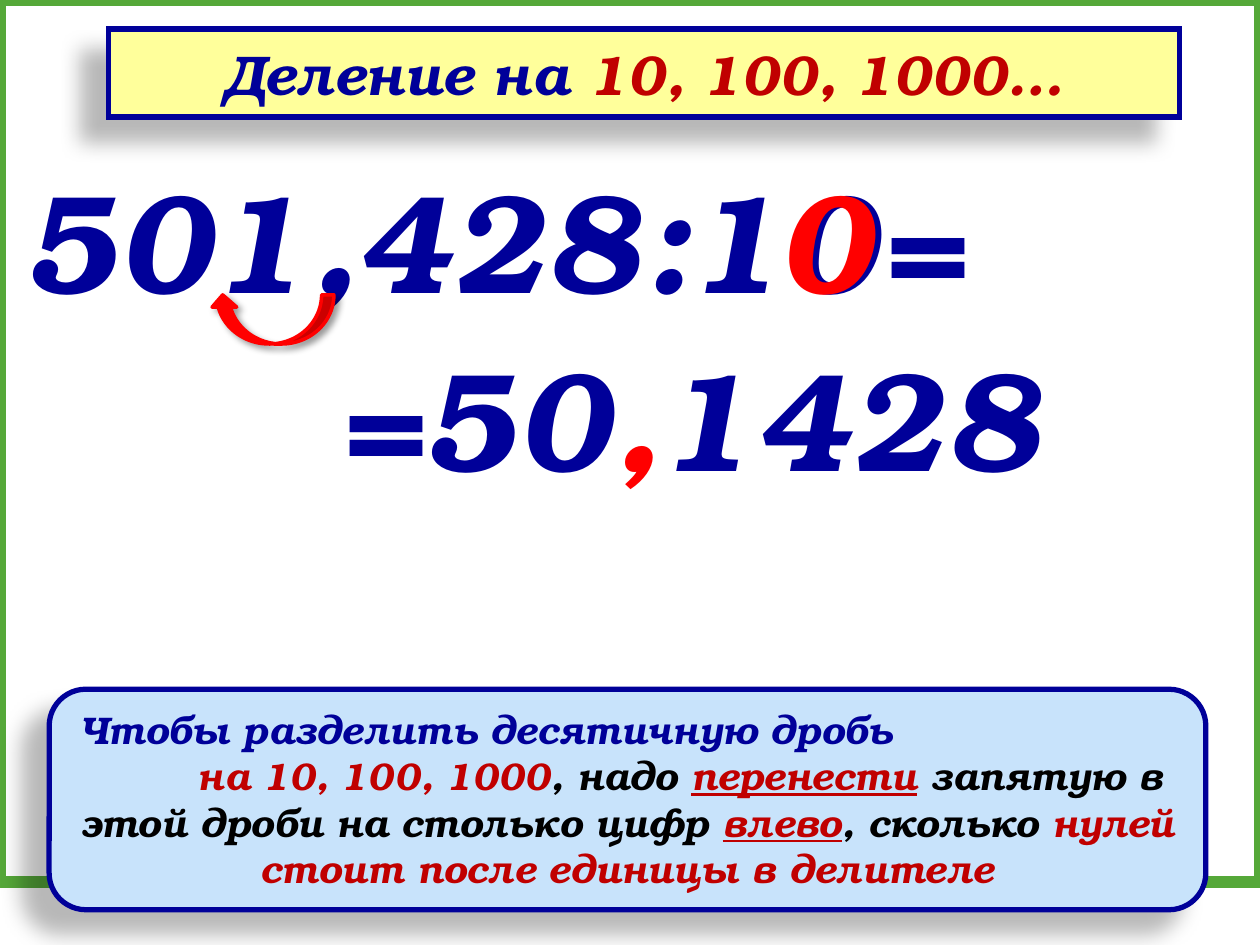
import math
from dataclasses import dataclass

import pptx
import pptx.dml.color
import pptx.enum.shapes
import pptx.enum.text
import pptx.oxml
import pptx.oxml.ns
import pptx.util
from pptx.util import Inches

ALIGN = pptx.enum.text.PP_ALIGN
SHAPE = pptx.enum.shapes.MSO_SHAPE


@dataclass(frozen=True)
class Theme:
    """Colours, font and type sizes of the slide."""
    font: str = "TeX Gyre Bonum"
    navy: str = "000099"
    crimson: str = "C00000"
    red: str = "FF0000"
    black: str = "000000"
    green: str = "55A839"
    yellow: str = "FFFF9B"
    sky: str = "C8E3FB"
    title_size: int = 32
    rule_size: int = 22
    digit_size: int = 80
    panel_shadow: tuple = (28, 11.8, 19.7, 141)
    arrow_shadow: tuple = (40, 4, 3, 45)


THEME = Theme()


def rgb(code):
    """Return a colour object for a hex code."""
    return pptx.dml.color.RGBColor.from_string(code)


def place(shape, box):
    """Move and size a shape to a box in inches."""
    shape.left, shape.top, shape.width, shape.height = map(Inches, box)


def paint(shape, fill, line, width):
    """Set the fill and outline of a shape."""
    shape.fill.solid()
    shape.fill.fore_color.rgb = rgb(fill)
    shape.line.color.rgb = rgb(line)
    shape.line.width = pptx.util.Pt(width)


def cast_shadow(shape, shadow):
    """Give a shape an outer shadow of opacity, blur, distance and angle."""
    opacity, blur, distance, angle = shadow
    shape.shadow.inherit = False
    effects = shape._element.spPr.find(pptx.oxml.ns.qn("a:effectLst"))
    effects.append(pptx.oxml.parse_xml(
        f'<a:outerShdw {pptx.oxml.ns.nsdecls("a")} blurRad="{pptx.util.Pt(blur)}" '
        f'dist="{pptx.util.Pt(distance)}" dir="{angle * 60000}" algn="ctr" rotWithShape="0">'
        f'<a:srgbClr val="{THEME.black}"><a:alpha val="{opacity * 1000}"/></a:srgbClr>'
        '</a:outerShdw>'))


def write(para, spans, size, align):
    """Fill a paragraph with (text, colour, underlined) spans."""
    for text, color, underlined in spans:
        span = para.add_run()
        span.text = text
        span.font.color.rgb = rgb(color)
        if underlined:
            span.font.underline = True
    para.alignment = align
    font = para.font
    font.name, font.size = THEME.font, pptx.util.Pt(size)
    font.bold = font.italic = True


def add_title(page, box):
    """Place the framed title."""
    title = page.shapes.title
    place(title, box)
    paint(title, THEME.yellow, THEME.navy, 3)
    outline = title.line._get_or_add_ln()
    outline.append(pptx.oxml.parse_xml(
        f'<a:miter {pptx.oxml.ns.nsdecls("a")} lim="800000"/>'))
    cast_shadow(title, THEME.panel_shadow)
    frame = title.text_frame
    frame.auto_size = pptx.enum.text.MSO_AUTO_SIZE.NONE
    frame.vertical_anchor = pptx.enum.text.MSO_ANCHOR.MIDDLE
    write(frame.paragraphs[0], [
        ("Деление на ", THEME.navy, False),
        ("10, 100, 1000…", THEME.crimson, False),
    ], THEME.title_size, ALIGN.CENTER)


def add_border(page, box):
    """Draw the page border with cut corners."""
    left, top, width, height = box
    right, bottom = left + width, top + height
    cut = 0.25
    corners = [(left, top + cut), (left, bottom - cut), (left + cut, bottom),
               (right - 0.17, bottom), (right, bottom - 0.33), (right, top + cut),
               (right - cut, top), (left + cut, top)]
    builder = page.shapes.build_freeform(*corners[0], scale=Inches(1))
    builder.add_line_segments(corners[1:], close=True)
    border = builder.convert_to_shape()
    border.fill.background()
    border.line.color.rgb = rgb(THEME.green)
    border.line.width = pptx.util.Pt(7)
    border.shadow.inherit = False


def add_rule(page, box):
    """Place the rounded panel that states the rule."""
    panel = page.shapes.add_shape(SHAPE.ROUNDED_RECTANGLE, *map(Inches, box))
    paint(panel, THEME.sky, THEME.navy, 3)
    cast_shadow(panel, THEME.panel_shadow)
    frame = panel.text_frame
    frame.word_wrap = True
    frame.vertical_anchor = pptx.enum.text.MSO_ANCHOR.TOP
    opening, body = frame.paragraphs[0], frame.add_paragraph()
    opening._p.get_or_add_pPr().set("indent", str(Inches(0.06)))
    body._p.get_or_add_pPr().set("indent", str(Inches(0.84)))
    write(opening, [("Чтобы разделить десятичную дробь", THEME.navy, False)],
          THEME.rule_size, ALIGN.LEFT)
    write(body, [
        ("на 10, 100, 1000", THEME.crimson, False),
        (", надо ", THEME.black, False),
        ("перенести", THEME.crimson, True),
        (" запятую в этой дроби на столько цифр ", THEME.black, False),
        ("влево", THEME.crimson, True),
        (", сколько ", THEME.black, False),
        ("нулей стоит после единицы в делителе", THEME.crimson, False),
    ], THEME.rule_size, ALIGN.CENTER)


def add_digits(page, box, spans):
    """Place one line of large digits."""
    frame = page.shapes.add_textbox(*map(Inches, box)).text_frame
    frame.word_wrap = False
    write(frame.paragraphs[0], spans, THEME.digit_size, ALIGN.LEFT)


def add_comma_arrow(page, box):
    """Place the curved arrow that moves the comma left."""
    arrow = page.shapes.add_shape(SHAPE.CURVED_UP_ARROW, *map(Inches, box))
    arrow._element.spPr.xfrm.set("flipH", "1")
    paint(arrow, THEME.red, THEME.red, 2)
    cast_shadow(arrow, THEME.arrow_shadow)


def add_example(page, box):
    """Place the worked division with its arrow and marked zero."""
    left, top, width, height = box
    row = height / 2
    add_digits(page, (left, top, 7.74, row), [("501,428:10=", THEME.navy, False)])
    add_digits(page, (left + 2.5, top + 1.41, width - 2.5, row), [
        ("=50", THEME.navy, False),
        (",", THEME.red, False),
        ("1428", THEME.navy, False),
    ])
    add_comma_arrow(page, (left + 1.59, top + 1.17, 0.98, 0.39))
    add_digits(page, (left + 5.99, top, 0.96, row), [("0", THEME.red, False)])


def main():
    """Build and save the slide."""
    deck = pptx.Presentation()
    deck.slide_width, deck.slide_height = Inches(10), Inches(7.5)
    page = deck.slides.add_slide(deck.slide_layouts.get_by_name("Title Only"))
    add_title(page, (0.86, 0.23, 8.5, 0.7))
    add_border(page, (0.08, 0.08, 9.84, 7.34))
    add_rule(page, (0.39, 5.47, 9.18, 1.75))
    add_example(page, (0.08, 1.17, 8.33, 2.9))
    deck.save("out.pptx")


if __name__ == "__main__":
    main()
